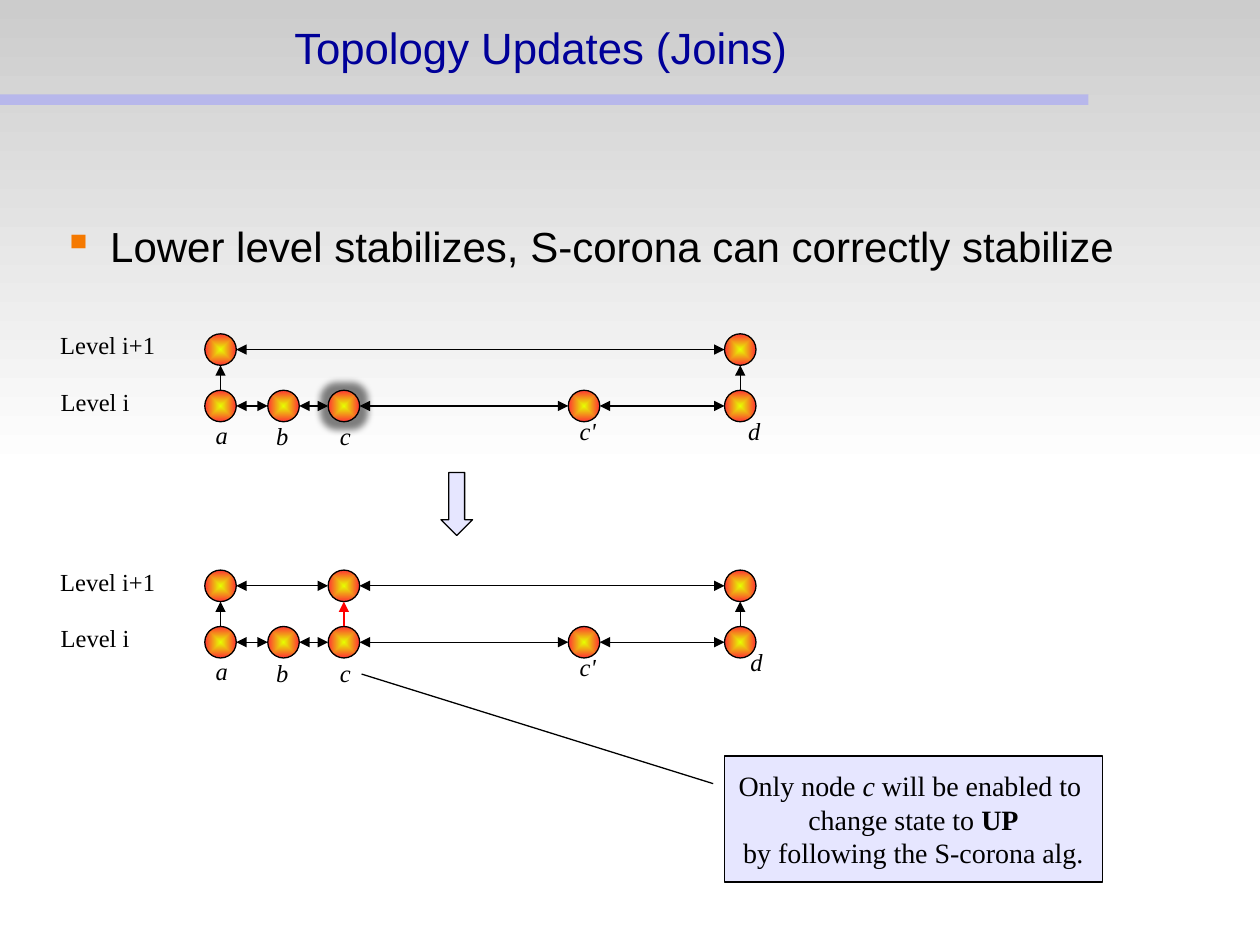
import itertools
from dataclasses import dataclass

import lxml.etree
import pptx
import pptx.dml.color
import pptx.enum.shapes
import pptx.enum.text
import pptx.oxml.ns
import pptx.util

Pt = pptx.util.Pt
RGBColor = pptx.dml.color.RGBColor
qn = pptx.oxml.ns.qn
SHAPE = pptx.enum.shapes.MSO_SHAPE
ALIGN = pptx.enum.text.PP_ALIGN
ANCHOR = pptx.enum.text.MSO_ANCHOR


@dataclass(frozen=True)
class Theme:
    sans: str = "Arial"
    serif: str = "Times New Roman"
    title_size: float = 25
    body_size: float = 24
    label_size: float = 14
    callout_size: float = 16
    line_width: float = 0.75
    title: str = "000099"
    ink: str = "000000"
    accent: str = "FF0000"
    bullet: str = "F57900"
    bar: str = "9999FF"
    panel: str = "E6E6FF"
    backdrop: tuple = ("CCCCCC", "FFFFFF")
    node: tuple = ("E6FF00", "FF3333")


@dataclass(frozen=True)
class Box:
    left: float
    top: float
    width: float
    height: float

    def lengths(self):
        return Pt(self.left), Pt(self.top), Pt(self.width), Pt(self.height)


@dataclass(frozen=True)
class Label:
    text: str
    center: float
    top: float
    italic: bool = True


@dataclass(frozen=True)
class Diagram:
    offset: float
    upper_nodes: str
    labels: tuple


THEME = Theme()
NODE_SIZE = 18
RADIUS = NODE_SIZE / 2
UPPER_Y, LOWER_Y = 199.75, 232
NODE_X = {"a": 126, "b": 162, "c": 196.5, "c'": 333.75, "d": 423}
SHARED_LABELS = (
    Label("Level i", 54.4, 217.3, False),
    Label("Level i+1", 61.6, 185, False),
    Label("a", 126.7, 236.3),
    Label("b", 161.3, 237),
    Label("c", 197.3, 237),
    Label("c'", 335.9, 234),
)
DIAGRAMS = (
    Diagram(0, "ad", SHARED_LABELS + (Label("d", 431, 234),)),
    Diagram(135, "acd", SHARED_LABELS + (Label("d", 432.4, 231),)),
)


def color(value: str) -> RGBColor:
    return RGBColor.from_string(value)


def add_shape(slide, kind, box: Box, fill: str = "", line: str = ""):
    shape = slide.shapes.add_shape(kind, *box.lengths())
    shape.shadow.inherit = False
    if fill:
        shape.fill.solid()
        shape.fill.fore_color.rgb = color(fill)
    if line:
        shape.line.color.rgb = color(line)
        shape.line.width = Pt(THEME.line_width)
    else:
        shape.line.fill.background()
    return shape


def set_gradient(shape, stops: tuple) -> None:
    shape.fill.gradient()
    shape.fill.gradient_angle = 270
    for stop, value in zip(shape.fill.gradient_stops, stops):
        stop.color.rgb = color(value)


def set_font(paragraph, name: str, size: float, value: str) -> None:
    paragraph.font.name = name
    paragraph.font.size = Pt(size)
    paragraph.font.color.rgb = color(value)


def add_text(slide, box: Box, text: str, name: str, size: float, value: str, wrap: bool = True):
    frame = slide.shapes.add_textbox(*box.lengths()).text_frame
    frame.word_wrap = wrap
    frame.margin_left = frame.margin_right = frame.margin_top = frame.margin_bottom = 0
    paragraph = frame.paragraphs[0]
    paragraph.text = text
    set_font(paragraph, name, size, value)
    return frame


def add_label(slide, label: Label, offset: float) -> None:
    width = 72
    box = Box(label.center - width / 2, label.top + offset, width, 24.5)
    frame = add_text(slide, box, label.text, THEME.serif, THEME.label_size, THEME.ink)
    frame.vertical_anchor = ANCHOR.MIDDLE
    frame.paragraphs[0].alignment = ALIGN.CENTER
    frame.paragraphs[0].font.italic = label.italic


def add_arrow(slide, start: tuple, end: tuple, value: str, ends: tuple) -> None:
    points = [Pt(length) for length in start + end]
    connector = slide.shapes.add_connector(pptx.enum.shapes.MSO_CONNECTOR.STRAIGHT, *points)
    connector.line.color.rgb = color(value)
    connector.line.width = Pt(THEME.line_width)
    line = connector.line._get_or_add_ln()
    for end_tag in ends:
        lxml.etree.SubElement(line, qn(end_tag), type="triangle")
    lxml.etree.SubElement(connector._element.spPr, qn("a:effectLst"))


def add_node(slide, x: float, y: float):
    box = Box(x - RADIUS, y - RADIUS, NODE_SIZE, NODE_SIZE)
    node = add_shape(slide, SHAPE.OVAL, box, line=THEME.ink)
    set_gradient(node, THEME.node)
    linear = node._element.spPr.find(".//" + qn("a:lin"))
    radial = lxml.etree.Element(qn("a:path"), path="shape")
    lxml.etree.SubElement(radial, qn("a:fillToRect"), l="50000", t="50000", r="50000", b="50000")
    linear.getparent().replace(linear, radial)
    return node


def add_glow(shape, radius: float) -> None:
    effects = shape._element.spPr.find(qn("a:effectLst"))
    glow = lxml.etree.SubElement(effects, qn("a:glow"), rad=str(Pt(radius)))
    shade = lxml.etree.SubElement(glow, qn("a:srgbClr"), val=THEME.ink)
    lxml.etree.SubElement(shade, qn("a:alpha"), val="50000")


def add_row(slide, names, y: float) -> dict:
    for first, second in itertools.pairwise(names):
        start = (NODE_X[first] + RADIUS, y)
        end = (NODE_X[second] - RADIUS, y)
        add_arrow(slide, start, end, THEME.ink, ("a:headEnd", "a:tailEnd"))
    return {name: add_node(slide, NODE_X[name], y) for name in names}


def add_diagram(slide, diagram: Diagram) -> dict:
    upper, lower = UPPER_Y + diagram.offset, LOWER_Y + diagram.offset
    add_row(slide, diagram.upper_nodes, upper)
    lower_nodes = add_row(slide, tuple(NODE_X), lower)
    for name in diagram.upper_nodes:
        x = NODE_X[name]
        value = THEME.accent if name == "c" else THEME.ink
        add_arrow(slide, (x, lower - RADIUS), (x, upper + RADIUS), value, ("a:tailEnd",))
    for label in diagram.labels:
        add_label(slide, label, diagram.offset)
    return lower_nodes


def add_header(slide) -> None:
    backdrop = add_shape(slide, SHAPE.RECTANGLE, Box(0, 0, 720, 270))
    set_gradient(backdrop, THEME.backdrop)
    bar = add_shape(slide, SHAPE.RECTANGLE, Box(0, 54, 622, 6), THEME.bar)
    shade = bar._element.spPr.find(".//" + qn("a:srgbClr"))
    lxml.etree.SubElement(shade, qn("a:alpha"), val="50000")
    title = add_text(slide, Box(0, 0, 618, 54), "Topology Updates (Joins)",
                     THEME.sans, THEME.title_size, THEME.title)
    title.vertical_anchor = ANCHOR.MIDDLE
    title.paragraphs[0].alignment = ALIGN.CENTER


def add_body(slide) -> None:
    body = add_text(slide, Box(36, 128, 648, 30),
                    "Lower level stabilizes, S-corona can correctly stabilize",
                    THEME.sans, THEME.body_size, THEME.ink)
    paragraph = body.paragraphs[0]
    properties = paragraph._p.get_or_add_pPr()
    properties.set("marL", str(Pt(27)))
    properties.set("indent", str(Pt(-27)))
    bullet_color = lxml.etree.Element(qn("a:buClr"))
    lxml.etree.SubElement(bullet_color, qn("a:srgbClr"), val=THEME.bullet)
    bullet = lxml.etree.Element(qn("a:buChar"), char="▪")
    properties.insert(0, bullet_color)
    properties.insert(1, bullet)
    paragraph.line_spacing = 0.95


def add_callout(slide) -> None:
    callout = add_shape(slide, SHAPE.LINE_CALLOUT_1, Box(414, 432, 216, 72), THEME.panel, THEME.ink)
    for index, value in enumerate((0.22, -0.03, -0.65, -0.96)):
        callout.adjustments[index] = value
    frame = callout.text_frame
    frame.word_wrap = False
    frame.vertical_anchor = ANCHOR.MIDDLE
    paragraph = frame.paragraphs[0]
    paragraph.alignment = ALIGN.CENTER
    set_font(paragraph, THEME.serif, THEME.callout_size, THEME.ink)
    paragraph.add_run().text = "Only node "
    node_name = paragraph.add_run()
    node_name.text = "c"
    node_name.font.italic = True
    paragraph.add_run().text = " will be enabled to "
    paragraph.add_line_break()
    paragraph.add_run().text = "change state to "
    state = paragraph.add_run()
    state.text = "UP"
    state.font.bold = True
    paragraph.add_line_break()
    paragraph.add_run().text = "by following the S-corona alg."


def main() -> None:
    presentation = pptx.Presentation()
    presentation.slide_width, presentation.slide_height = Pt(720), Pt(540)
    slide = presentation.slides.add_slide(presentation.slide_layouts[6])
    add_header(slide)
    add_body(slide)
    before, _ = [add_diagram(slide, diagram) for diagram in DIAGRAMS]
    add_glow(before["c"], 8)
    add_shape(slide, SHAPE.DOWN_ARROW, Box(252, 270, 18, 36), THEME.panel, THEME.ink)
    add_callout(slide)
    presentation.save("out.pptx")


if __name__ == "__main__":
    main()
